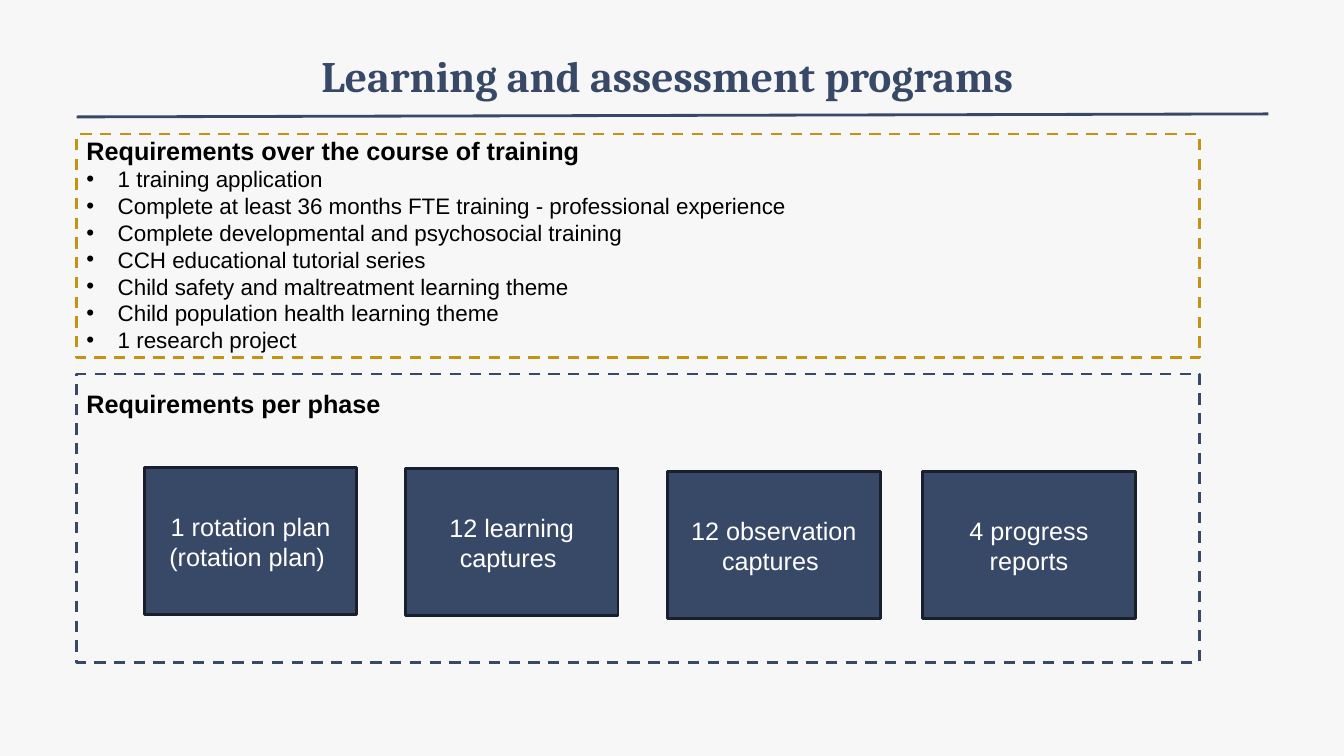
import pptx
import pptx.util
import pptx.dml.color
import pptx.enum.dml
import pptx.enum.shapes
import pptx.enum.text
import pptx.oxml.ns
import lxml.etree

NAVY = pptx.dml.color.RGBColor(0x38, 0x49, 0x67)
DARK_NAVY = pptx.dml.color.RGBColor(0x19, 0x20, 0x2D)
GOLD = pptx.dml.color.RGBColor(0xC6, 0x92, 0x14)
BLACK = pptx.dml.color.RGBColor(0x00, 0x00, 0x00)
WHITE = pptx.dml.color.RGBColor(0xFF, 0xFF, 0xFF)
PALE_GREY = pptx.dml.color.RGBColor(0xF7, 0xF7, 0xF7)

deck = pptx.Presentation()
deck.slide_width = pptx.util.Inches(13.33)
deck.slide_height = pptx.util.Inches(7.5)
slide = deck.slides.add_slide(deck.slide_layouts[6])
slide.background.fill.solid()
slide.background.fill.fore_color.rgb = PALE_GREY

# Grid of 1333 columns and 750 rows
COLUMN = deck.slide_width / 1333
ROW = deck.slide_height / 750
MARGIN = 76
PANEL_WIDTH = 1114

# Text formats
TITLE = {"name": "Cambria", "size": pptx.util.Pt(31), "bold": True}
HEADING = {"name": "Arial", "size": pptx.util.Pt(18), "bold": True}
ITEM = {"name": "Arial", "size": pptx.util.Pt(16), "bold": False}
CARD = {"name": "Arial", "size": pptx.util.Pt(18), "bold": False}


def place(left, top, width, height):
    return [round(n) for n in (left * COLUMN, top * ROW, width * COLUMN, height * ROW)]


def write(paragraph, text, style, color, align=pptx.enum.text.PP_ALIGN.LEFT):
    paragraph.alignment = align
    run = paragraph.add_run()
    run.text = text
    for key, value in style.items():
        setattr(run.font, key, value)
    run.font.color.rgb = color


# Title and rule
title = slide.shapes.add_textbox(*place(166, 29, 1001, 91)).text_frame
title_format = {
    "word_wrap": True,
    "vertical_anchor": pptx.enum.text.MSO_ANCHOR.MIDDLE,
    "margin_left": pptx.util.Inches(0.07),
    "margin_right": pptx.util.Inches(0.07),
    "margin_top": pptx.util.Inches(0.04),
    "margin_bottom": pptx.util.Inches(0.04),
}
for key, value in title_format.items():
    setattr(title, key, value)
write(title.paragraphs[0], "Learning and assessment programs ", TITLE, NAVY,
      pptx.enum.text.PP_ALIGN.CENTER)

title_rule = slide.shapes.add_connector(
    pptx.enum.shapes.MSO_CONNECTOR.STRAIGHT, *place(MARGIN, 116, 1258, 113))
title_rule.line.color.rgb = NAVY
title_rule.line.width = pptx.util.Pt(2)
lxml.etree.SubElement(title_rule._element.spPr, pptx.oxml.ns.qn("a:effectLst"))

# Dashed panels with their headings and bulleted requirements
panels = [
    (GOLD, 133, 222, (129, 984, 232), "Requirements over the course of training", [
        "1 training application",
        "Complete at least 36 months FTE training - professional experience",
        "Complete developmental and psychosocial training",
        "CCH educational tutorial series",
        "Child safety and maltreatment learning theme",
        "Child population health learning theme",
        "1 research project",
    ]),
    (NAVY, 371, 286, (380, 667, 40), "Requirements per phase", []),
]
for color, top, height, (text_top, text_width, text_height), heading, items in panels:
    panel = slide.shapes.add_shape(
        pptx.enum.shapes.MSO_SHAPE.RECTANGLE, *place(MARGIN, top, PANEL_WIDTH, height))
    panel.shadow.inherit = False
    panel.fill.background()
    panel.line.color.rgb = color
    panel.line.width = pptx.util.Pt(2)
    panel.line.dash_style = pptx.enum.dml.MSO_LINE.DASH

    requirements = slide.shapes.add_textbox(
        *place(MARGIN, text_top, text_width, text_height)).text_frame
    requirements.word_wrap = True
    write(requirements.paragraphs[0], heading, HEADING, BLACK)
    for item in items:
        paragraph = requirements.add_paragraph()
        indents = paragraph._p.get_or_add_pPr()
        indents.set("marL", str(pptx.util.Inches(0.31)))
        indents.set("indent", str(-pptx.util.Inches(0.31)))
        bullet_font = lxml.etree.SubElement(indents, pptx.oxml.ns.qn("a:buFont"))
        bullet_font.set("typeface", "Arial")
        bullet = lxml.etree.SubElement(indents, pptx.oxml.ns.qn("a:buChar"))
        bullet.set("char", "•")
        write(paragraph, item, ITEM, BLACK)

# Cards for each phase
phase_cards = [
    (143, 464, "1 rotation plan (rotation plan) "),
    (402, 465, "12 learning captures "),
    (662, 468, "12 observation captures "),
    (915, 468, "4 progress reports"),
]
for left, top, requirement in phase_cards:
    card = slide.shapes.add_shape(
        pptx.enum.shapes.MSO_SHAPE.RECTANGLE, *place(left, top, 211, 146))
    card.shadow.inherit = False
    card.fill.solid()
    card.fill.fore_color.rgb = NAVY
    card.line.color.rgb = DARK_NAVY
    card.line.width = pptx.util.Pt(2)
    card.text_frame.word_wrap = True
    card.text_frame.vertical_anchor = pptx.enum.text.MSO_ANCHOR.MIDDLE
    write(card.text_frame.paragraphs[0], requirement, CARD, WHITE,
          pptx.enum.text.PP_ALIGN.CENTER)

deck.save("out.pptx")
